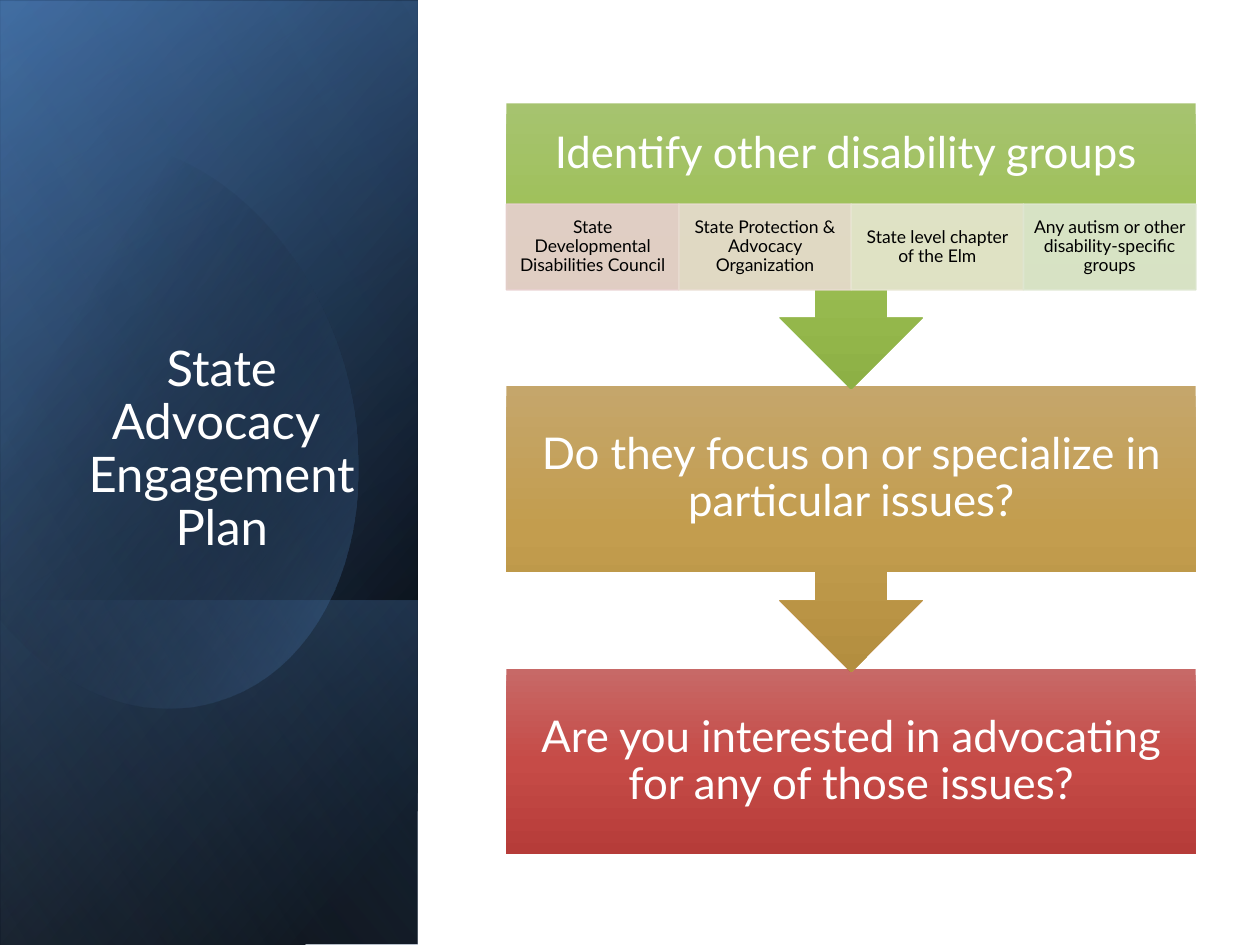
from pptx import Presentation
from pptx.dml.color import RGBColor
from pptx.enum.shapes import MSO_SHAPE
from pptx.enum.text import MSO_ANCHOR, PP_ALIGN
from pptx.oxml import parse_xml
from pptx.oxml.ns import nsdecls, qn
from pptx.util import Inches, Pt

RECT = MSO_SHAPE.RECTANGLE
CALLOUT = MSO_SHAPE.DOWN_ARROW_CALLOUT
MIDDLE, BOTTOM = MSO_ANCHOR.MIDDLE, MSO_ANCHOR.BOTTOM
CENTER = PP_ALIGN.CENTER
FONT = "Lato"

COLORS = {
    "black": "000000", "white": "FFFFFF",
    "navy": "376092", "blue": "4F81BD", "pale": "95B3D7",
}
GREEN = ("A6C36F", "9DC054", "8DB045")
GOLD = ("C5A66B", "C39D4E", "B38E3F")
RED = ("C76967", "C64B47", "B63C39")

# left, top, width, height, angle, stops (position, colour, opacity)
PANEL = (-2.09, 2.09, 7.5, 3.31)
BASE = (*PANEL, 50, [(8, "black", 100), (100, "navy", 100)])
GLOW = (-2.09, 2.11, 7.5, 3.31, 30, [(0, "black", 0), (99, "blue", 46)])
BAND = (0.29, 4.48, 2.74, 3.31, 130, [(2, "blue", 29), (100, "black", 30)])
SHEEN = (*PANEL, 120, [(0, "black", 0), (99, "pale", 11)])

# Each item holds the end of a line, or two handles and the end of a curve
BLOB = [
    [(0.96, 1.14)],
    [(1.71, 1.22), (2.44, 1.92), (2.73, 2.9)],
    [(3.07, 4.12), (2.62, 5.31), (1.71, 5.57)],
    [(1.14, 5.74), (0.53, 5.5), (0.07, 5)],
    [(-0.03, 4.88)],
    [(-0.25, 1.66)],
    [(-0.15, 1.54)],
    [(0.02, 1.37), (0.22, 1.25), (0.45, 1.18)],
    [(0.62, 1.13), (0.79, 1.12), (0.96, 1.14)],
]

LEFT, WIDTH, TOP, STEP = 4.02, 5.47, 0.82, 2.245
BODY, FULL, HEAD, TILE = 1.47, 2.27, 0.8, 0.68
STEPS = [
    ("Identify other disability groups ", CALLOUT, FULL, GREEN, BODY - HEAD),
    ("Do they focus on or specialize in particular issues?",
     CALLOUT, FULL, GOLD, 0),
    ("Are you interested in advocating for any of those issues?",
     RECT, BODY, RED, 0),
]
TILES = [
    ("State Developmental Disabilities Council", "E8D0D0"),
    ("State Protection & Advocacy Organization", "E8DCD0"),
    ("State level chapter of the Elm", "E7E6D1"),
    ("Any autism or other disability-specific groups", "DEE7D1"),
]


def shade(shape, stops, angle):
    """Give a shape a linear gradient and no outline."""
    shape.shadow.inherit = False
    shape.line.fill.background()
    shape.fill.background()
    marks = "".join(
        f'<a:gs pos="{pos * 1000}"><a:srgbClr val="{COLORS.get(color, color)}">'
        f'<a:alpha val="{alpha * 1000}"/></a:srgbClr></a:gs>'
        for pos, color, alpha in stops)
    grad = parse_xml(
        f'<a:gradFill {nsdecls("a")} rotWithShape="1"><a:gsLst>{marks}</a:gsLst>'
        f'<a:lin ang="{angle * 60000}" scaled="0"/></a:gradFill>')
    props = shape.element.spPr
    props.replace(props.find(qn("a:noFill")), grad)


def add_box(slide, kind, *box):
    return slide.shapes.add_shape(kind, *map(Inches, box))


def add_panel(slide, left, top, width, height, angle, stops):
    panel = add_box(slide, RECT, left, top, width, height)
    panel.rotation = 90
    panel.element.spPr.xfrm.set("flipH", "1")
    shade(panel, stops, angle)


def curve(start, one, two, end, count=24):
    """Points along a cubic curve, without its start."""
    for i in range(1, count + 1):
        t = i / count
        u = 1 - t
        yield tuple(u**3 * a + 3 * u * u * t * b + 3 * u * t * t * c + t**3 * d
                    for a, b, c, d in zip(start, one, two, end))


def add_blob(slide):
    points = list(BLOB[0])
    for part in BLOB[1:]:
        points.extend(curve(points[-1], *part) if len(part) == 3 else part)
    # The builder rounds to whole units, so it works in EMU
    spots = [(Inches(x), Inches(y)) for x, y in points]
    build = slide.shapes.build_freeform(*spots[0])
    build.add_line_segments(spots[1:], close=True)
    shade(build.convert_to_shape(), [(29, "black", 0), (100, "blue", 43)], 30)


def write(shape, lines, size, color, anchor=MIDDLE):
    frame = shape.text_frame
    frame.word_wrap = True
    frame.vertical_anchor = anchor
    para = frame.paragraphs[0]
    para.alignment = CENTER
    para.line_spacing = 0.9
    for i, line in enumerate(lines):
        if i:
            para.add_line_break()
        run = para.add_run()
        run.text = line
        run.font.size = Pt(size)
        run.font.name = FONT
        run.font.color.rgb = RGBColor.from_string(COLORS[color])


def pad(shape, side, edge, extra=0):
    frame = shape.text_frame
    frame.margin_left = frame.margin_right = Inches(side)
    frame.margin_top = Inches(edge)
    frame.margin_bottom = Inches(edge + extra)


def add_title(slide):
    title = slide.shapes.title
    title.left, title.top = Inches(0.48), Inches(1.84)
    title.width, title.height = Inches(2.56), Inches(2.62)
    write(title, ["State Advocacy ", "Engagement Plan"], 28, "white", BOTTOM)
    slide.shapes.element.append(title.element)  # in front of the panels


def add_step(slide, top, text, kind, height, tones, extra):
    step = add_box(slide, kind, LEFT, top, WIDTH, height)
    shade(step, [(i * 50, tone, 100) for i, tone in enumerate(tones)], 90)
    pad(step, 0.19, 0.19, extra)
    write(step, [text], 25, "white")


def add_tile(slide, left, width, text, color):
    tile = add_box(slide, RECT, left, TOP + HEAD, width, TILE)
    tile.shadow.inherit = False
    tile.line.width = Pt(1)
    for fill in (tile.fill, tile.line.fill):
        fill.solid()
        fill.fore_color.rgb = RGBColor.from_string(color)
    for tint in tile.element.spPr.iter(qn("a:srgbClr")):
        tint.append(parse_xml(f'<a:alpha {nsdecls("a")} val="90000"/>'))
    pad(tile, 0.08, 0.01)
    write(tile, [text], 10, "black")


def main():
    deck = Presentation()
    deck.slide_width, deck.slide_height = Inches(10), Inches(7.5)
    slide = deck.slides.add_slide(deck.slide_layouts[5])
    for panel in (BASE, GLOW, BAND):
        add_panel(slide, *panel)
    add_blob(slide)
    add_panel(slide, *SHEEN)
    add_title(slide)
    # Lower steps first, so that each arrow tip lies over the next step
    for i, step in reversed(list(enumerate(STEPS))):
        add_step(slide, TOP + i * STEP, *step)
    width = WIDTH / len(TILES)
    for i, tile in enumerate(TILES):
        add_tile(slide, LEFT + i * width, width, *tile)
    deck.save("out.pptx")


if __name__ == "__main__":
    main()
